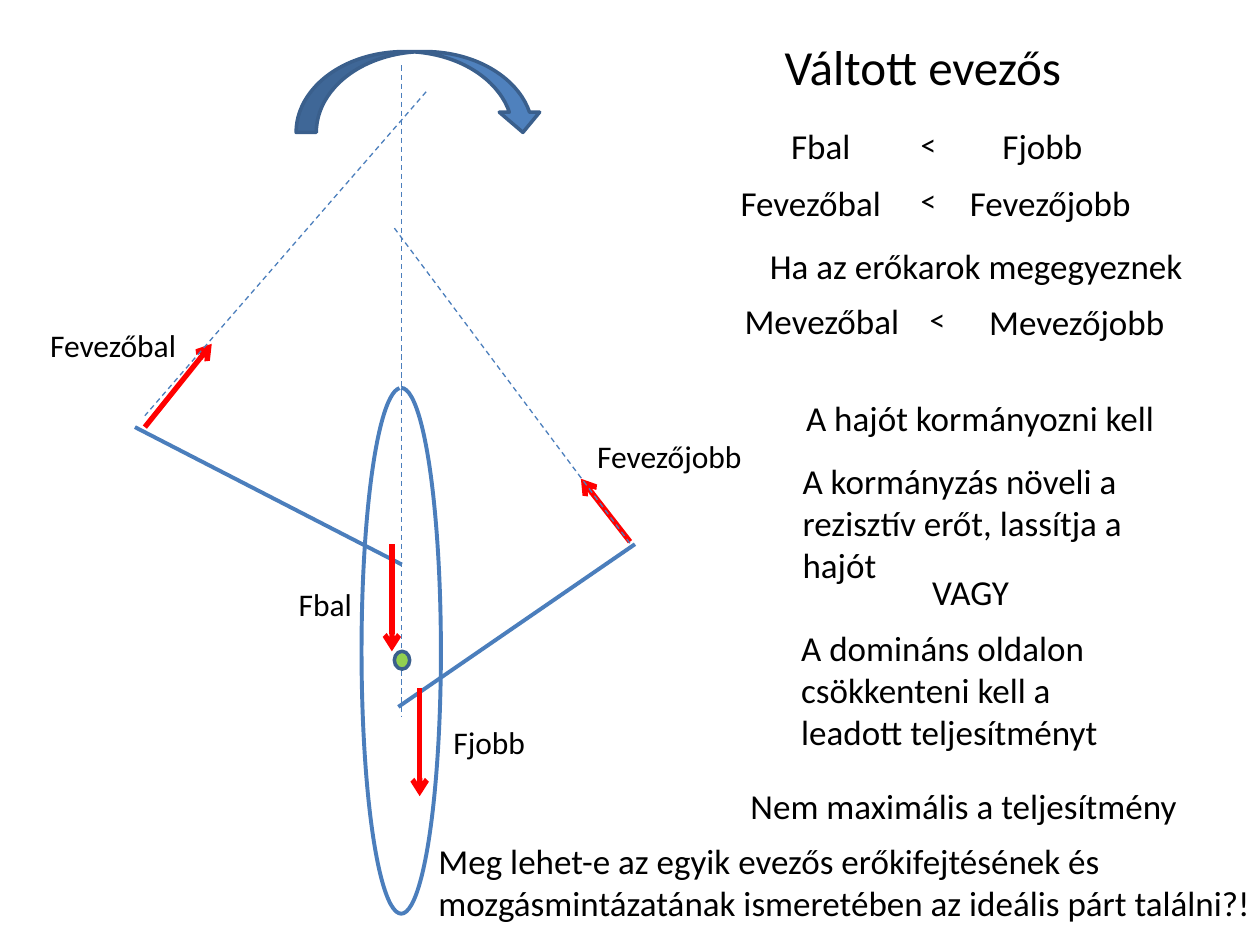
"""Builds the slide on the forces acting in an alternately rowed boat."""
from lxml import etree
from pptx import Presentation
from pptx.dml.color import RGBColor
from pptx.enum.dml import MSO_LINE
from pptx.enum.shapes import MSO_CONNECTOR, MSO_SHAPE
from pptx.enum.text import MSO_AUTO_SIZE
from pptx.oxml.ns import qn
from pptx.util import Cm, Pt

STRAIGHT = MSO_CONNECTOR.STRAIGHT
DASH = MSO_LINE.DASH
ARC = MSO_SHAPE.ARC
CURVED_ARROW = MSO_SHAPE.CURVED_DOWN_ARROW
OVAL = MSO_SHAPE.OVAL
FIT_SHAPE = MSO_AUTO_SIZE.SHAPE_TO_FIT_TEXT

COLORS = {
    "outline": "4B7EBC",
    "force": "FF0000",
    "turn": "4F81BD",
    "edge": "3A5F8C",
    "center": "92D050",
    "text": "000000",
}


def color(name):
    return RGBColor.from_string(COLORS[name])


def add_shape(kind, box, fill, line, width):
    shape = slide.shapes.add_shape(kind, *map(Cm, box))
    shape.shadow.inherit = False
    if fill:
        shape.fill.solid()
        shape.fill.fore_color.rgb = color(fill)
    else:
        shape.fill.background()
    shape.line.color.rgb = color(line)
    shape.line.width = Pt(width)
    return shape


presentation = Presentation()
presentation.slide_width = Cm(25.4)
presentation.slide_height = Cm(19.05)
slide = presentation.slides.add_slide(presentation.slide_layouts[6])

hull = add_shape(ARC, (7.29, 7.82, 1.6, 10.6), None, "outline", 2.25)
hull.adjustments[0] = 162
hull.adjustments[1] = 161.777
add_shape(CURVED_ARROW, (5.97, 1.04, 4.98, 1.63), "turn", "edge", 2)

LINE_STYLES = {
    "oar": ("outline", 2.25),
    "force": ("force", 3),
    "guide": ("outline", 0.75),
}
lines = [
    ("oar", 8.1, 11.38, 2.72, 8.61),
    ("oar", 12.8, 10.97, 8.03, 14.25),
    ("force", 7.9, 10.97, 7.9, 13.13),
    ("force", 8.46, 13.87, 8.46, 16.05),
    ("force", 12.7, 10.92, 11.71, 9.65),
    ("force", 2.92, 8.61, 4.27, 6.93),
    ("guide", 8.1, 1.32, 8.1, 14.45),
    ("guide", 8.59, 1.85, 2.92, 8.38),
    ("guide", 7.95, 4.6, 12.75, 11.02),
]
for role, *ends in lines:
    color_name, width = LINE_STYLES[role]
    connector = slide.shapes.add_connector(STRAIGHT, *map(Cm, ends))
    connector.line.color.rgb = color(color_name)
    connector.line.width = Pt(width)
    if role == "guide":
        connector.line.dash_style = DASH
    if role == "force":
        etree.SubElement(connector.line._get_or_add_ln(), qn("a:tailEnd"), type="arrow")
    etree.SubElement(connector._element.spPr, qn("a:effectLst"))

add_shape(OVAL, (7.95, 13.13, 0.31, 0.36), "center", "edge", 2)

texts = [
    ("Váltott evezős", 28, False, 15.57, 0.61, 6.15, 1.45),
    ("Fbal", 20, True, 15.7, 2.39, 2.26, 1.12),
    ("<", 18, False, 18.31, 2.39, 0.84, 1.02),
    ("Fjobb", 20, True, 19.96, 2.39, 2.79, 1.12),
    ("Fevezőbal", 20, True, 14.68, 3.53, 4.37, 1.12),
    ("<", 18, True, 18.31, 3.53, 0.76, 1.02),
    ("Fevezőjobb", 20, True, 19.3, 3.53, 4.88, 1.12),
    ("Ha az erőkarok megegyeznek", 20, False, 15.27, 4.8, 8.92, 1.12),
    ("Mevezőbal", 20, False, 14.76, 5.92, 3.66, 1.12),
    ("<", 18, True, 18.49, 5.92, 0.76, 1.02),
    ("Mevezőjobb", 20, False, 19.69, 5.94, 4.06, 1.12),
    ("A hajót kormányozni kell", 20, False, 16, 7.87, 7.59, 1.12),
    ("A kormányzás növeli a rezisztív erőt, lassítja a hajót", 20, True,
     15.93, 9.14, 8.08, 2.82),
    ("VAGY", 20, False, 18.54, 11.38, 2.08, 1.12),
    ("A domináns oldalon csökkenteni kell a leadott teljesítményt", 20, True,
     15.9, 12.5, 6.73, 2.82),
    ("Nem maximális a teljesítmény", 20, False, 14.88, 15.7, 9.19, 1.12),
    ("Meg lehet-e az egyik evezős erőkifejtésének és mozgásmintázatának "
     "ismeretében az ideális párt találni?!", 20, True, 8.59, 16.79, 17.4, 1.96),
    ("Fevezőbal", 18, True, 0.76, 6.45, 4.37, 1.02),
    ("Fevezőjobb", 18, True, 11.79, 8.69, 4.88, 1.02),
    ("Fbal", 18, False, 5.77, 11.66, 1.6, 1.02),
    ("Fjobb", 18, False, 8.89, 14.45, 1.98, 1.02),
]
for text, size, wrap, *box in texts:
    text_frame = slide.shapes.add_textbox(*map(Cm, box)).text_frame
    text_frame.word_wrap = wrap
    text_frame.auto_size = FIT_SHAPE
    paragraph = text_frame.paragraphs[0]
    paragraph.text = text
    paragraph.font.name = "Calibri"
    paragraph.font.size = Pt(size)
    paragraph.font.color.rgb = color("text")

presentation.save("out.pptx")
